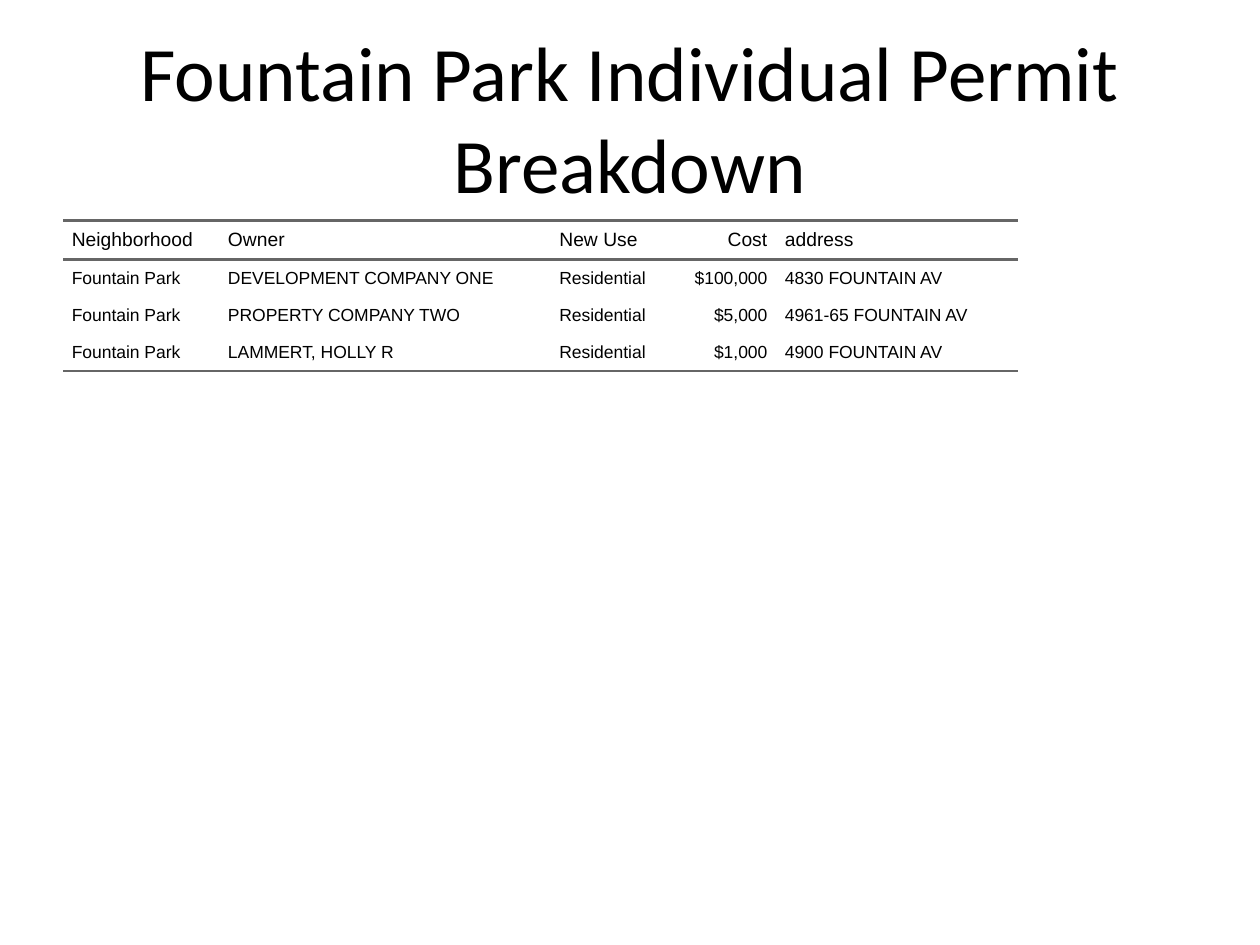
from pptx import Presentation
from pptx.dml.color import RGBColor
from pptx.enum.text import MSO_ANCHOR, MSO_AUTO_SIZE, PP_ALIGN
from pptx.oxml.ns import qn
from pptx.util import Inches, Pt
from lxml.etree import SubElement

COLORS = {"text": "000000", "rule": "666666"}
COLUMN_WIDTHS = [1.24, 2.63, 1.04, 0.75, 1.92]
ROW_HEIGHT = 0.25
COST_COLUMN = 3
PERMITS = [
    ["Neighborhood", "Owner", "New Use", "Cost", "address"],
    ["Fountain Park", "DEVELOPMENT COMPANY ONE", "Residential", "$100,000", "4830 FOUNTAIN AV"],
    ["Fountain Park", "PROPERTY COMPANY TWO", "Residential", "$5,000", "4961-65 FOUNTAIN AV"],
    ["Fountain Park", "LAMMERT, HOLLY R", "Residential", "$1,000", "4900 FOUNTAIN AV"],
]
TITLE_FRAME = {
    "vertical_anchor": MSO_ANCHOR.MIDDLE,
    "word_wrap": True,
    "auto_size": MSO_AUTO_SIZE.NONE,
}
CELL_FORMAT = {
    "vertical_anchor": MSO_ANCHOR.MIDDLE,
    "margin_left": Inches(0.07),
    "margin_right": Inches(0.07),
    "margin_top": Inches(0.07),
    "margin_bottom": Inches(0.07),
}


def apply_format(target, values):
    for name, value in values.items():
        setattr(target, name, value)


def write_text(frame, text, font_name, size, alignment):
    para = frame.paragraphs[0]
    para.alignment = alignment
    span = para.add_run()
    span.text = text
    apply_format(span.font, {"name": font_name, "size": Pt(size), "bold": False})
    span.font.color.rgb = RGBColor.from_string(COLORS["text"])


def add_title(page, text):
    box = page.shapes.title
    apply_format(box, {
        "left": Inches(0.5),
        "top": Inches(0.3),
        "width": Inches(9),
        "height": Inches(1.25),
    })
    apply_format(box.text_frame, TITLE_FRAME)
    write_text(box.text_frame, text, "Calibri", 44, PP_ALIGN.CENTER)


def set_borders(cell, ruled_sides):
    properties = cell._tc.get_or_add_tcPr()
    for position, side in enumerate(["lnL", "lnR", "lnT", "lnB"]):
        line = properties.makeelement(qn(f"a:{side}"), {})
        properties.insert(position, line)
        if side in ruled_sides:
            line.set("w", str(Pt(1.5)))
            fill = SubElement(line, qn("a:solidFill"))
            SubElement(fill, qn("a:srgbClr"), val=COLORS["rule"])
        else:
            SubElement(line, qn("a:noFill"))


def ruled_sides(row_index, row_count):
    if row_index == 0:
        return {"lnT", "lnB"}
    sides = set()
    if row_index == 1:
        sides.add("lnT")
    if row_index == row_count - 1:
        sides.add("lnB")
    return sides


def add_permit_table(page, rows):
    table = page.shapes.add_table(
        len(rows), len(COLUMN_WIDTHS), Inches(0.5), Inches(1.75),
        Inches(sum(COLUMN_WIDTHS)), Inches(ROW_HEIGHT * len(rows)),
    ).table
    apply_format(table, {"first_row": False, "horz_banding": False})
    for column, width in zip(table.columns, COLUMN_WIDTHS):
        column.width = Inches(width)
    for row_index, values in enumerate(rows):
        size = 11 if row_index == 0 else 10
        for column_index, value in enumerate(values):
            cell = table.cell(row_index, column_index)
            apply_format(cell, CELL_FORMAT)
            cell.fill.background()
            alignment = PP_ALIGN.RIGHT if column_index == COST_COLUMN else PP_ALIGN.LEFT
            write_text(cell.text_frame, value, "Arial", size, alignment)
            set_borders(cell, ruled_sides(row_index, len(rows)))


def main():
    deck = Presentation()
    apply_format(deck, {"slide_width": Inches(10), "slide_height": Inches(7.5)})
    page = deck.slides.add_slide(deck.slide_layouts[5])
    add_title(page, "Fountain Park Individual Permit Breakdown")
    add_permit_table(page, PERMITS)
    deck.save("out.pptx")


if __name__ == "__main__":
    main()
